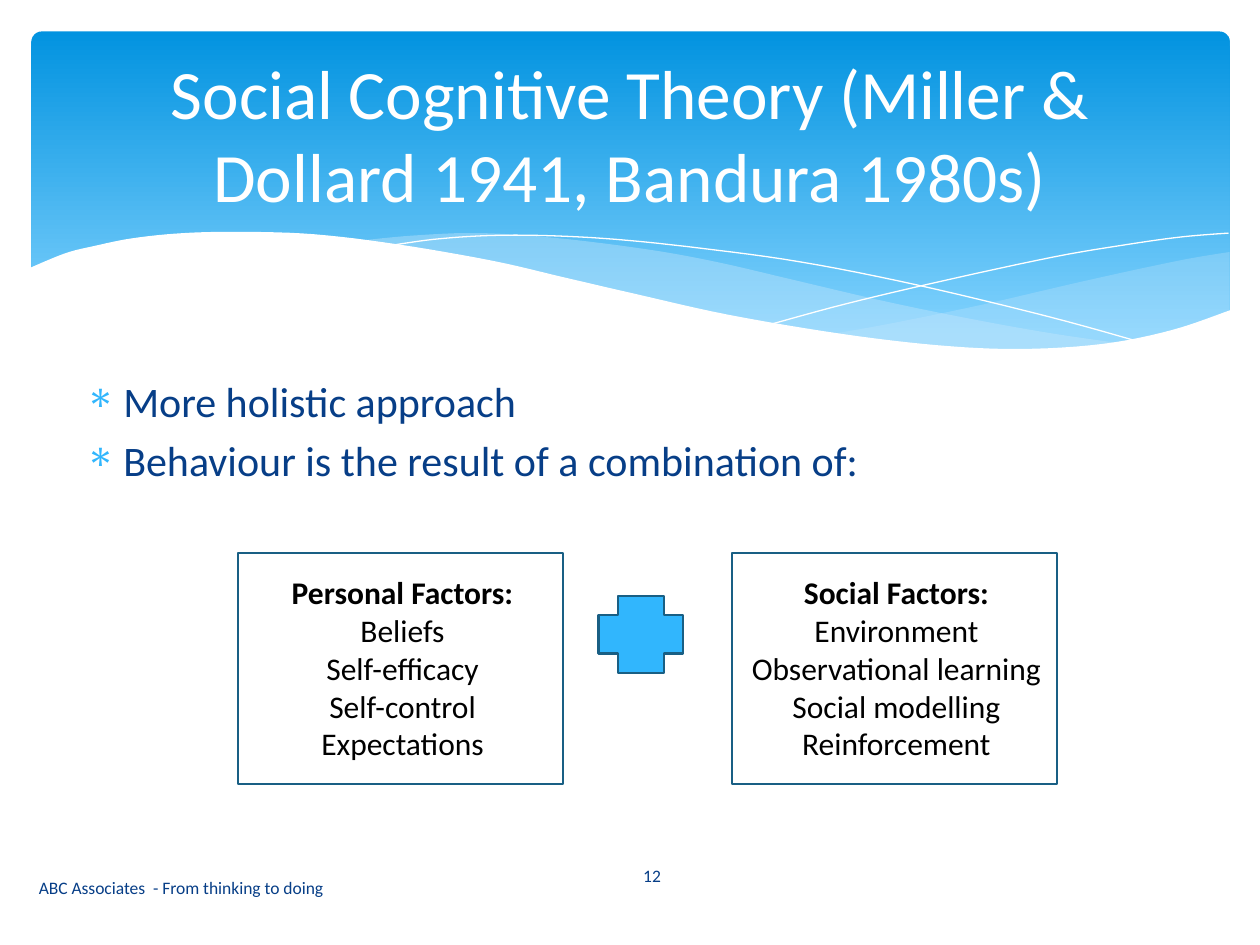
from lxml import etree
from pptx import Presentation
from pptx.dml.color import RGBColor
from pptx.enum.shapes import MSO_SHAPE
from pptx.enum.text import MSO_ANCHOR, PP_ALIGN
from pptx.oxml.ns import qn
from pptx.util import Pt

PX = 9144
RECT, ROUND, PLUS = MSO_SHAPE.RECTANGLE, MSO_SHAPE.ROUNDED_RECTANGLE, MSO_SHAPE.CROSS
TOP, MID = MSO_ANCHOR.TOP, MSO_ANCHOR.MIDDLE
LEFT, MIDST = PP_ALIGN.LEFT, PP_ALIGN.CENTER
SKY, EDGE, NAVY, WHITE, PALE = "31B6FD", "195F84", "073E87", "FFFFFF", "C6E7FC"
SMALL = {"size": Pt(10), "color": NAVY}

RIGHT_WAVE = [
    [(976, 200), (935, 207), (861, 223), (779, 242), (706, 257), (661, 265)],
    [(661, 265), (705, 271), (757, 276), (814, 278), (872, 274), (921, 265),
     (949, 257), (976, 247)],
]
MID_WAVE = [
    [(893, 273), (837, 265), (775, 254), (706, 240), (629, 222), (569, 208),
     (514, 198), (442, 189), (380, 185), (328, 187), (286, 191)],
    [(286, 191), (342, 199), (404, 211), (491, 232), (566, 248), (634, 261),
     (709, 272), (773, 277), (828, 278), (876, 275), (893, 273)],
]
FALL_LINE = [[(309, 195), (344, 190), (387, 187), (433, 187), (489, 190),
              (556, 197), (636, 208), (727, 226), (831, 251), (907, 272)]]
RISE_LINE = [[(613, 257), (672, 241), (748, 223), (836, 204), (895, 194),
              (938, 188), (975, 185)]]
WHITE_WAVE = [
    [(977, 246), (930, 262), (875, 273), (809, 277), (744, 274), (668, 265),
     (579, 250), (503, 233), (447, 220), (391, 207), (316, 194), (250, 186),
     (193, 184), (146, 185), (106, 189), (76, 195), (52, 201), (23, 213)],
    [(23, 329), (977, 329)],
]


def rgb(code):
    return RGBColor.from_string(code)


def apply(item, values):
    for name, value in values.items():
        setattr(item, name, value)


def paint(shape, fill=None, line=None, width=1.25, alpha=None):
    shape.shadow.inherit = False
    for part, code in ((shape.fill, fill), (shape.line.fill, line)):
        if code:
            part.solid()
            part.fore_color.rgb = rgb(code)
        else:
            part.background()
    if line:
        shape.line.width = Pt(width)
    if alpha:
        tint = shape._element.spPr.find(qn("a:solidFill")).find(qn("a:srgbClr"))
        etree.SubElement(tint, qn("a:alpha"), val=str(alpha * 1000))
    return shape


def block(slide, kind, box):
    return slide.shapes.add_shape(kind, *(n * PX for n in box))


def write(slide, box, lines, font, align=MIDST, anchor=MID, wrap=True):
    frame = slide.shapes.add_textbox(*(n * PX for n in box)).text_frame
    apply(frame, {"word_wrap": wrap, "vertical_anchor": anchor})
    for i, line in enumerate(lines):
        para = frame.paragraphs[0] if i == 0 else frame.add_paragraph()
        para.alignment = align
        run = para.add_run()
        run.text = line
        form = {"name": "Calibri", **font}
        run.font.color.rgb = rgb(form.pop("color"))
        apply(run.font, form)
    return frame


def smooth(knots, steps=6):
    ends = [knots[0], *knots, knots[-1]]
    points = [knots[0]]
    for a, b, c, d in zip(ends, ends[1:], ends[2:], ends[3:]):
        for k in range(1, steps + 1):
            t = k / steps
            points.append(tuple(
                (2 * q + (r - p) * t + (2 * p - 5 * q + 4 * r - s) * t ** 2
                 + (3 * q - p - 3 * r + s) * t ** 3) / 2
                for p, q, r, s in zip(a, b, c, d)))
    return points


def curve(slide, left, top, parts, close):
    points = [((left + x) * PX, (top + y) * PX)
              for part in parts for x, y in smooth(part)]
    pen = slide.shapes.build_freeform(*points[0])
    pen.add_line_segments(points[1:], close=close)
    return pen.convert_to_shape()


def banner(slide, left, top):
    back = block(slide, ROUND, (left + 25, top + 25, 951, 270))
    back.adjustments[0] = 0.03
    paint(back)
    back.fill.gradient()
    back.fill.gradient_angle = 270
    for stop, (place, code) in zip(back.fill.gradient_stops,
                                   ((0, "0293E0"), (0.9, "83D3FE"))):
        stop.color.rgb = rgb(code)
        stop.position = place
    for wave, alpha in ((RIGHT_WAVE, 29), (MID_WAVE, 40)):
        paint(curve(slide, left, top, wave, True), PALE, alpha=alpha)
    for line in (FALL_LINE, RISE_LINE):
        paint(curve(slide, left, top, line, False), line=WHITE, width=0)
    paint(curve(slide, left, top, WHITE_WAVE, True), WHITE)
    write(slide, (left + 50, top + 37, 900, 137),
          ["Social Cognitive Theory (Miller & Dollard 1941, Bandura 1980s)"],
          {"size": Pt(39.6), "color": WHITE})


def points(slide, box, lines):
    frame = write(slide, box, lines, {"size": Pt(24), "color": NAVY}, LEFT, TOP)
    for para in frame.paragraphs:
        para.space_before = Pt(4.8)
        props = para._p.get_or_add_pPr()
        props.set("marL", str(30 * PX))
        props.set("indent", str(-30 * PX))
        tint = etree.SubElement(props, qn("a:buClr"))
        etree.SubElement(tint, qn("a:srgbClr"), val=SKY)
        etree.SubElement(props, qn("a:buChar"), char="∗")


def card(slide, box, inset, width, lines):
    left, top = box[:2]
    paint(block(slide, RECT, box), line=EDGE)
    frame = write(slide, (left + inset, top + 11, width, 162), lines,
                  {"size": Pt(18), "color": "000000"}, anchor=TOP, wrap=False)
    frame.paragraphs[0].runs[0].font.bold = True


def factors(slide, left, top):
    card(slide, (left, top, 258, 183), 28, 205,
         ["Personal Factors:", "Beliefs", "Self-efficacy", "Self-control",
          "Expectations"])
    card(slide, (left + 392, top, 258, 183), 0, 261,
         ["Social Factors:", "Environment", "Observational learning",
          "Social modelling", "Reinforcement"])
    paint(block(slide, PLUS, (left + 286, top + 34, 67, 61)), SKY, EDGE)


def footer(slide, left, top):
    write(slide, (left + 433, top, 127, 40), ["12"], SMALL)
    write(slide, (left, top + 9, 414, 40),
          ["ABC Associates  - From thinking to doing"], SMALL, LEFT)


def main():
    deck = Presentation()
    apply(deck, {"slide_width": 1000 * PX, "slide_height": 750 * PX})
    slide = deck.slides.add_slide(deck.slide_layouts[6])
    banner(slide, 0, 0)
    points(slide, (58, 293, 875, 124),
           ["More holistic approach",
            "Behaviour is the result of a combination of:"])
    factors(slide, 189, 439)
    footer(slide, 21, 675)
    deck.save("out.pptx")


if __name__ == "__main__":
    main()
